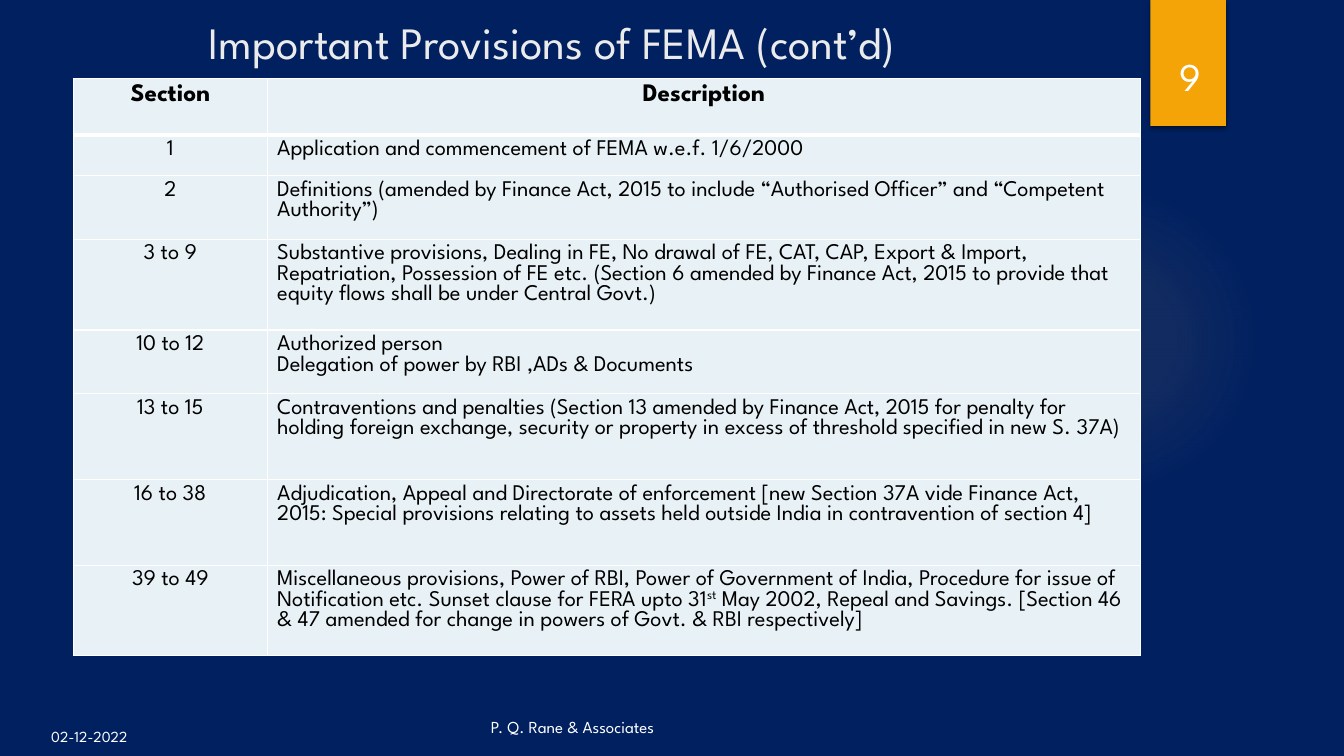
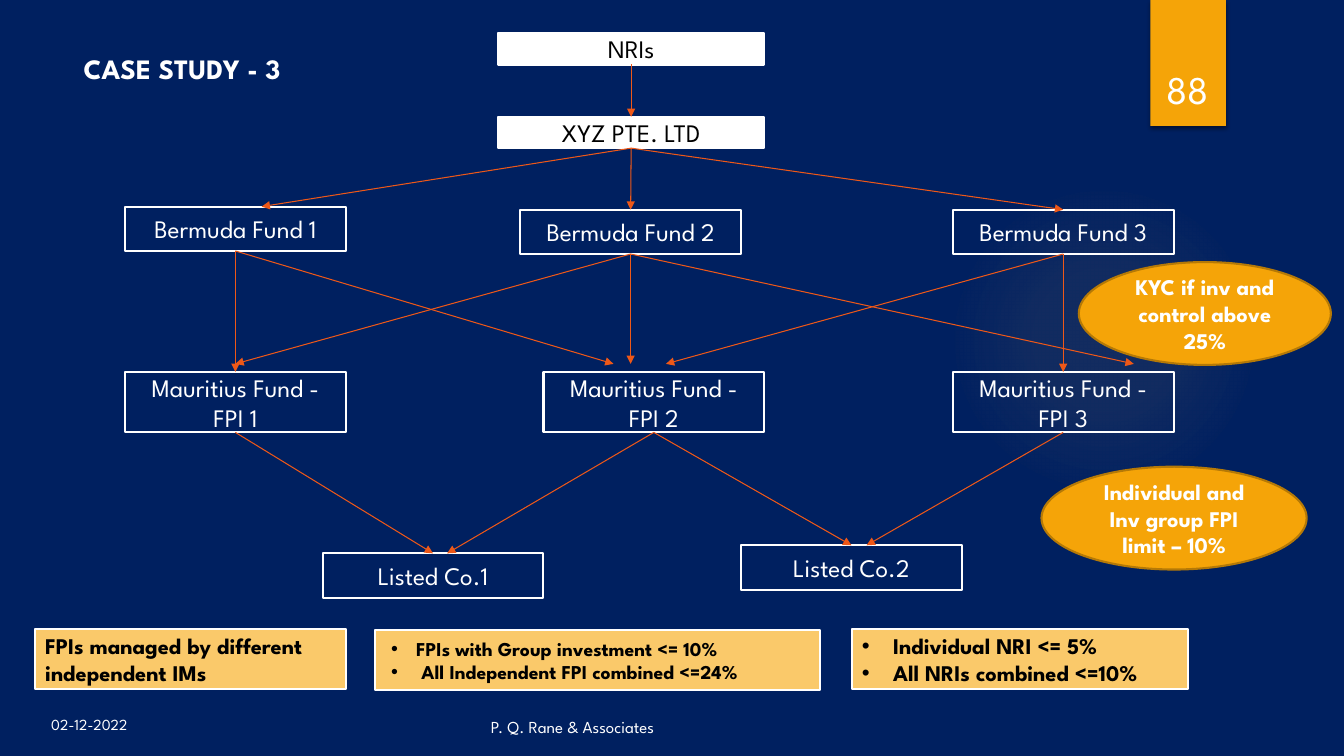
"""Build two FEMA slides: a table of provisions and a case study diagram."""
from lxml.etree import SubElement
from pptx import Presentation
from pptx.dml.color import RGBColor
from pptx.enum.shapes import MSO_CONNECTOR, MSO_SHAPE
from pptx.enum.text import MSO_ANCHOR, PP_ALIGN
from pptx.oxml import parse_xml
from pptx.oxml.ns import nsdecls, qn
from pptx.util import Inches, Pt

FONT = "League Spartan"
COLORS = {"navy": "002060", "amber": "F5A408", "sand": "FAC96A", "brown": "B57906",
          "orange": "EE5818", "white": "FFFFFF", "title": "EBEBEB", "black": "000000",
          "cell": "E8F1F6"}
DATE = "02-12-2022"
FIRM = "P. Q. Rane & Associates"

TITLE = "Important Provisions of FEMA (cont’d)"
TABLE_AT = (0.73, 0.78)
COLUMNS = (1.92, 8.66)
PROVISIONS = [
    (0.56, "Section", ["Description"]),
    (0.4, "1", ["Application and commencement of FEMA w.e.f. 1/6/2000"]),
    (0.6, "2", ["Definitions (amended by Finance Act, 2015 to include “Authorised Officer” "
                "and “Competent Authority”)"]),
    (0.85, "3 to 9", ["Substantive provisions, Dealing in FE, No drawal of FE, CAT, CAP, "
                      "Export & Import, Repatriation, Possession of FE etc. (Section 6 amended "
                      "by Finance Act, 2015 to provide that equity flows shall be under "
                      "Central Govt.)"]),
    (0.6, "10 to 12", ["Authorized person", "Delegation of power by RBI ,ADs & Documents"]),
    (0.85, "13 to 15", ["Contraventions and penalties (Section 13 amended by Finance Act, 2015 "
                        "for penalty for holding foreign exchange, security or property in "
                        "excess of threshold specified in new S. 37A)"]),
    (0.85, "16 to 38", ["Adjudication, Appeal and Directorate of enforcement [new Section 37A "
                        "vide Finance Act, 2015: Special provisions relating to assets held "
                        "outside India in contravention of section 4]"]),
    (0.89, "39 to 49", ["Miscellaneous provisions, Power of RBI, Power of Government of India, "
                        "Procedure for issue of Notification etc. Sunset clause for FERA upto "
                        "31^st^ May 2002, Repeal and Savings. [Section 46 & 47 amended for "
                        "change in powers of Govt. & RBI respectively]"]),
]

CASE_TITLE = "CASE STUDY - 3"
SIZES = {"owner": (2.64, 0.31), "fund": (2.19, 0.44), "fpi": (2.19, 0.6)}
NODES = {
    "nri": ("NRIs", "owner", 4.94, 0.33),
    "xyz": ("XYZ PTE. LTD", "owner", 4.94, 1.16),
    "b1": ("Bermuda Fund 1", "fund", 1.24, 2.05),
    "b2": ("Bermuda Fund 2", "fund", 5.16, 2.08),
    "b3": ("Bermuda Fund 3", "fund", 9.45, 2.08),
    "m1": ("Mauritius Fund - FPI 1", "fpi", 1.24, 3.69),
    "m2": ("Mauritius Fund - FPI 2", "fpi", 5.39, 3.69),
    "m3": ("Mauritius Fund - FPI 3", "fpi", 9.45, 3.69),
    "l1": ("Listed Co.1", "fund", 3.2, 5.49),
    "l2": ("Listed Co.2", "fund", 7.35, 5.41),
}
ARROWS = [
    ("nri", "xyz", 0, 0), ("xyz", "b1", 0.26, 0), ("xyz", "b2", 0, 0), ("xyz", "b3", 0, 0),
    ("b1", "m1", 0, 0), ("b1", "m2", -0.4, -0.08), ("b2", "m1", 0, -0.08),
    ("b2", "m2", -0.23, -0.08), ("b3", "m2", 0.12, -0.08), ("b3", "m3", 0, 0),
    ("b2", "m3", 0.7, -0.08), ("m1", "l1", 0, 0), ("m2", "l1", 0.14, 0),
    ("m2", "l2", 0, 0), ("m3", "l2", 0.15, 0),
]
LIMITS = [
    ("Individual and Inv group FPI limit – 10%", (10.33, 4.63, 2.63, 1.02)),
    ("KYC if inv and control above 25%", (10.7, 2.6, 2.5, 1.02)),
]
NOTES = [
    (["FPIs managed by different independent IMs"], (0.35, 6.24, 3.08, 0.6), 16, None),
    (["FPIs with Group investment <= 10%", " All Independent FPI combined <=24%"],
     (3.72, 6.25, 4.41, 0.6), 14, 0.25),
    (["Individual NRI <= 5%", "All NRIs combined <=10%"], (8.45, 6.24, 3.33, 0.6), 16, 0.31),
]


def rgb(name):
    return RGBColor.from_string(COLORS[name])


def write(tf, lines, size, color="white", bold=False, align=PP_ALIGN.LEFT, hang=None):
    """Fill a text frame; text between carets is superscript."""
    tf.word_wrap = True
    for i, line in enumerate(lines):
        p = tf.paragraphs[0] if i == 0 else tf.add_paragraph()
        p.alignment = align
        if hang:
            pPr = p._p.get_or_add_pPr()
            pPr.set("marL", str(Inches(0.31)))
            pPr.set("indent", str(-Inches(hang)))
            SubElement(pPr, qn("a:buFont"), typeface="Arial")
            SubElement(pPr, qn("a:buChar"), char="•")
        for j, part in enumerate(line.split("^")):
            r = p.add_run()
            r.text = part
            for key, value in {"name": FONT, "size": Pt(size), "bold": bold}.items():
                setattr(r.font, key, value)
            r.font.color.rgb = rgb(color)
            if j % 2:
                r.font._element.set("baseline", "30000")


def add_text(s, text, at, size, anchor=MSO_ANCHOR.TOP, **fmt):
    tf = s.shapes.add_textbox(*map(Inches, at)).text_frame
    tf.vertical_anchor = anchor
    write(tf, [text], size, **fmt)


def add_box(s, at, fill=None, line=None, kind=MSO_SHAPE.RECTANGLE):
    sp = s.shapes.add_shape(kind, *map(Inches, at))
    sp.shadow.inherit = False
    if fill:
        sp.fill.solid()
        sp.fill.fore_color.rgb = rgb(fill)
    else:
        sp.fill.background()
    if line:
        sp.line.color.rgb = rgb(line)
        sp.line.width = Pt(1.5)
    else:
        sp.line.fill.background()
    sp.text_frame.vertical_anchor = MSO_ANCHOR.MIDDLE
    return sp


def add_glow(s):
    sp = add_box(s, (9.41, 1.83, 3.08, 3.08), kind=MSO_SHAPE.OVAL)
    stops = "".join(
        f'<a:gs pos="{pos}000"><a:srgbClr val="{COLORS["sand"]}">'
        f'<a:alpha val="{alpha}000"/></a:srgbClr></a:gs>'
        for pos, alpha in ((0, 7), (36, 6), (69, 0)))
    grad = parse_xml(
        f'<a:gradFill {nsdecls("a")}><a:gsLst>{stops}</a:gsLst><a:path path="circle">'
        '<a:fillToRect l="50000" t="50000" r="50000" b="50000"/></a:path></a:gradFill>')
    spPr = sp._element.spPr
    spPr.replace(spPr.find(qn("a:noFill")), grad)


def add_number_tab(s):
    sp = add_box(s, (11.41, 0, 0.75, 1.25), "amber")
    effects = sp._element.spPr.find(qn("a:effectLst"))
    effects.append(parse_xml(
        f'<a:outerShdw {nsdecls("a")} blurRad="{Pt(3)}" dist="{Pt(2)}" dir="5400000">'
        '<a:srgbClr val="000000"><a:alpha val="45000"/></a:srgbClr></a:outerShdw>'))


def new_slide(prs, number, number_at, date_top):
    s = prs.slides.add_slide(prs.slide_layouts[6])
    s.background.fill.solid()
    s.background.fill.fore_color.rgb = rgb("navy")
    add_glow(s)
    add_number_tab(s)
    add_text(s, number, number_at, 28, MSO_ANCHOR.BOTTOM, align=PP_ALIGN.CENTER)
    add_text(s, DATE, (0.41, date_top, 1.08, 0.33), 11)
    add_text(s, FIRM, (4.77, 7.03, 4.22, 0.33), 12, MSO_ANCHOR.BOTTOM)
    return s


def underline_cell(cell):
    cell._tc.get_or_add_tcPr().insert(0, parse_xml(
        f'<a:lnB {nsdecls("a")} w="{Pt(3)}"><a:solidFill>'
        f'<a:srgbClr val="{COLORS["white"]}"/></a:solidFill></a:lnB>'))


def add_provisions(s):
    heights = [row[0] for row in PROVISIONS]
    size = (sum(COLUMNS), sum(heights))
    table = s.shapes.add_table(len(heights), len(COLUMNS),
                               *map(Inches, TABLE_AT + size)).table
    table.horz_banding = False
    for column, width in zip(table.columns, COLUMNS):
        column.width = Inches(width)
    for i, (height, section, description) in enumerate(PROVISIONS):
        table.rows[i].height = Inches(height)
        header = i == 0
        for j, lines in enumerate(([section], description)):
            cell = table.cell(i, j)
            cell.fill.solid()
            cell.fill.fore_color.rgb = rgb("cell")
            if header:
                underline_cell(cell)
            centred = header or j == 0
            write(cell.text_frame, lines, 18 if header else 16, "black", header,
                  PP_ALIGN.CENTER if centred else PP_ALIGN.LEFT)


def add_arrow(s, source, target, dx, dy):
    x = target.left + target.width // 2 + Inches(dx)
    y = target.top + Inches(dy)
    line = s.shapes.add_connector(MSO_CONNECTOR.STRAIGHT, 0, 0, x, y)
    line.begin_connect(source, 2)
    if not (dx or dy):
        line.end_connect(target, 0)
    line.line.color.rgb = rgb("orange")
    line.line.width = Pt(0.75)
    SubElement(line.line._get_or_add_ln(), qn("a:tailEnd"), type="triangle")
    SubElement(line._element.spPr, qn("a:effectLst"))


def add_structure(s):
    boxes = {}
    for key, (text, kind, left, top) in NODES.items():
        owner = kind == "owner"
        sp = add_box(s, (left, top) + SIZES[kind], "white" if owner else None, "white")
        write(sp.text_frame, [text], 18, "black" if owner else "white",
              align=PP_ALIGN.CENTER)
        boxes[key] = sp
    for source, target, dx, dy in ARROWS:
        add_arrow(s, boxes[source], boxes[target], dx, dy)
    for text, at in LIMITS:
        sp = add_box(s, at, "amber", "brown", MSO_SHAPE.OVAL)
        write(sp.text_frame, [text], 16, bold=True, align=PP_ALIGN.CENTER)
    for lines, at, size, hang in NOTES:
        sp = add_box(s, at, "sand", "white")
        write(sp.text_frame, lines, size, "black", True, hang=hang)


def main():
    prs = Presentation()
    prs.slide_width, prs.slide_height = Inches(13.33), Inches(7.5)

    s = new_slide(prs, "9", (11.32, 0.54, 0.97, 0.5), 7.16)
    add_text(s, TITLE, (1.97, 0.03, 11.36, 0.77), 32, MSO_ANCHOR.MIDDLE, color="title")
    add_provisions(s)

    s = new_slide(prs, "88", (11.32, 0.32, 0.92, 0.84), 7.05)
    add_text(s, CASE_TITLE, (0.73, 0.46, 3.38, 0.44), 20, bold=True)
    add_structure(s)

    prs.save("out.pptx")


if __name__ == "__main__":
    main()
